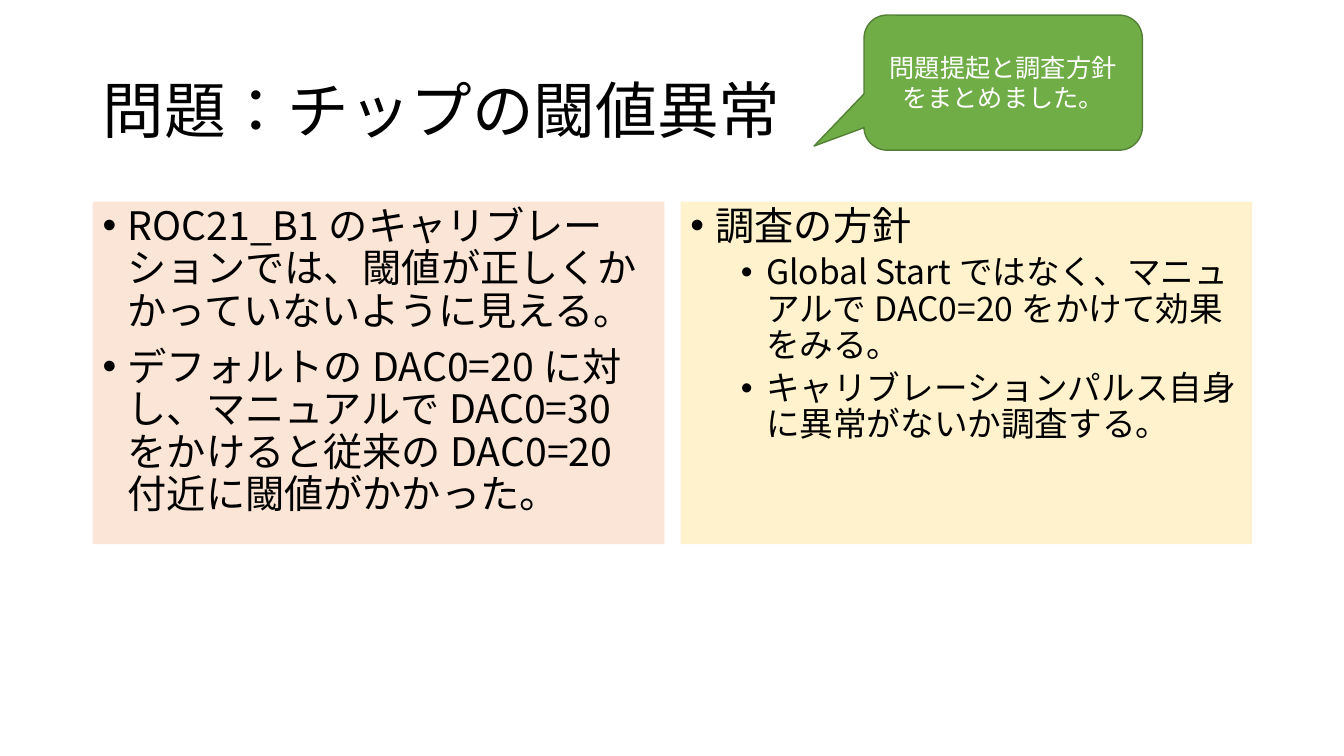
from pptx import Presentation
from pptx.dml.color import RGBColor as RGB
from pptx.enum.lang import MSO_LANGUAGE_ID as LANG
from pptx.enum.shapes import MSO_SHAPE as SHAPE
from pptx.enum.text import MSO_ANCHOR as ANCHOR, PP_ALIGN as ALIGN
from pptx.oxml.ns import qn
from pptx.util import Inches, Pt
from lxml.etree import SubElement

FONT = "Noto Sans CJK JP"
COLORS = {
    "text": "000000",
    "white": "FFFFFF",
    "peach": "FBE5D6",
    "cream": "FFF2CC",
    "green": "70AD47",
    "edge": "538035",
}
LEVELS = [(28, 10, 0.25), (24, 5, 0.75)]


def color(name):
    return RGB.from_string(COLORS[name])


def add_run(para, text, size, tint="text"):
    run = para.add_run()
    run.text = text
    font = run.font
    font.size = Pt(size)
    font.name = FONT
    font.language_id = LANG.JAPANESE
    font.color.rgb = color(tint)
    SubElement(font._element, qn("a:ea"), typeface=FONT)


def add_block(slide, kind, box, fill, anchor):
    shape = slide.shapes.add_shape(kind, *map(Inches, box))
    shape.shadow.inherit = False
    shape.fill.solid()
    shape.fill.fore_color.rgb = color(fill)
    shape.line.fill.background()
    frame = shape.text_frame
    frame.word_wrap = True
    frame.vertical_anchor = anchor
    return shape


def add_title(slide, box, text):
    frame = slide.shapes.add_textbox(*map(Inches, box)).text_frame
    frame.word_wrap = True
    frame.vertical_anchor = ANCHOR.MIDDLE
    para = frame.paragraphs[0]
    para.line_spacing = 0.9
    add_run(para, text, 44)


def add_bullet(para, text, level):
    size, space, indent = LEVELS[level]
    para.level = level
    para.alignment = ALIGN.LEFT
    para.line_spacing = 0.9
    para.space_before = Pt(space)
    props = para._p.get_or_add_pPr()
    props.set("marL", str(Inches(indent)))
    props.set("indent", str(Inches(-0.25)))
    SubElement(props, qn("a:buFont"), typeface="Arial")
    SubElement(props, qn("a:buChar"), char="•")
    add_run(para, text, size)


def add_panel(slide, box, fill, items):
    frame = add_block(slide, SHAPE.RECTANGLE, box, fill, ANCHOR.TOP).text_frame
    for i, (level, text) in enumerate(items):
        para = frame.add_paragraph() if i else frame.paragraphs[0]
        add_bullet(para, text, level)


def add_callout(slide, box, text):
    shape = add_block(slide, SHAPE.ROUNDED_RECTANGULAR_CALLOUT, box, "green", ANCHOR.MIDDLE)
    for i, value in enumerate((-0.68, 0.47, 0.17)):
        shape.adjustments[i] = value
    shape.line.color.rgb = color("edge")
    shape.line.width = Pt(1)
    para = shape.text_frame.paragraphs[0]
    para.alignment = ALIGN.CENTER
    add_run(para, text, 18, "white")


def main():
    deck = Presentation()
    deck.slide_width, deck.slide_height = Inches(13.33), Inches(7.5)
    slide = deck.slides.add_slide(deck.slide_layouts[6])
    add_title(slide, (0.92, 0.4, 11.5, 1.45), "問題：チップの閾値異常")
    panels = [
        ("peach", [
            (0, "ROC21_B1のキャリブレーションでは、閾値が正しくかかっていないように見える。"),
            (0, "デフォルトのDAC0=20に対し、マニュアルでDAC0=30をかけると従来のDAC0=20付近に閾値がかかった。"),
        ]),
        ("cream", [
            (0, "調査の方針"),
            (1, "Global Startではなく、マニュアルでDAC0=20をかけて効果をみる。"),
            (1, "キャリブレーションパルス自身に異常がないか調査する。"),
        ]),
    ]
    width, gap = 5.67, 0.16
    for i, (fill, items) in enumerate(panels):
        add_panel(slide, (0.92 + i * (width + gap), 2, width, 3.4), fill, items)
    add_callout(slide, (8.57, 0.15, 2.76, 1.34), "問題提起と調査方針をまとめました。")
    deck.save("out.pptx")


if __name__ == "__main__":
    main()
